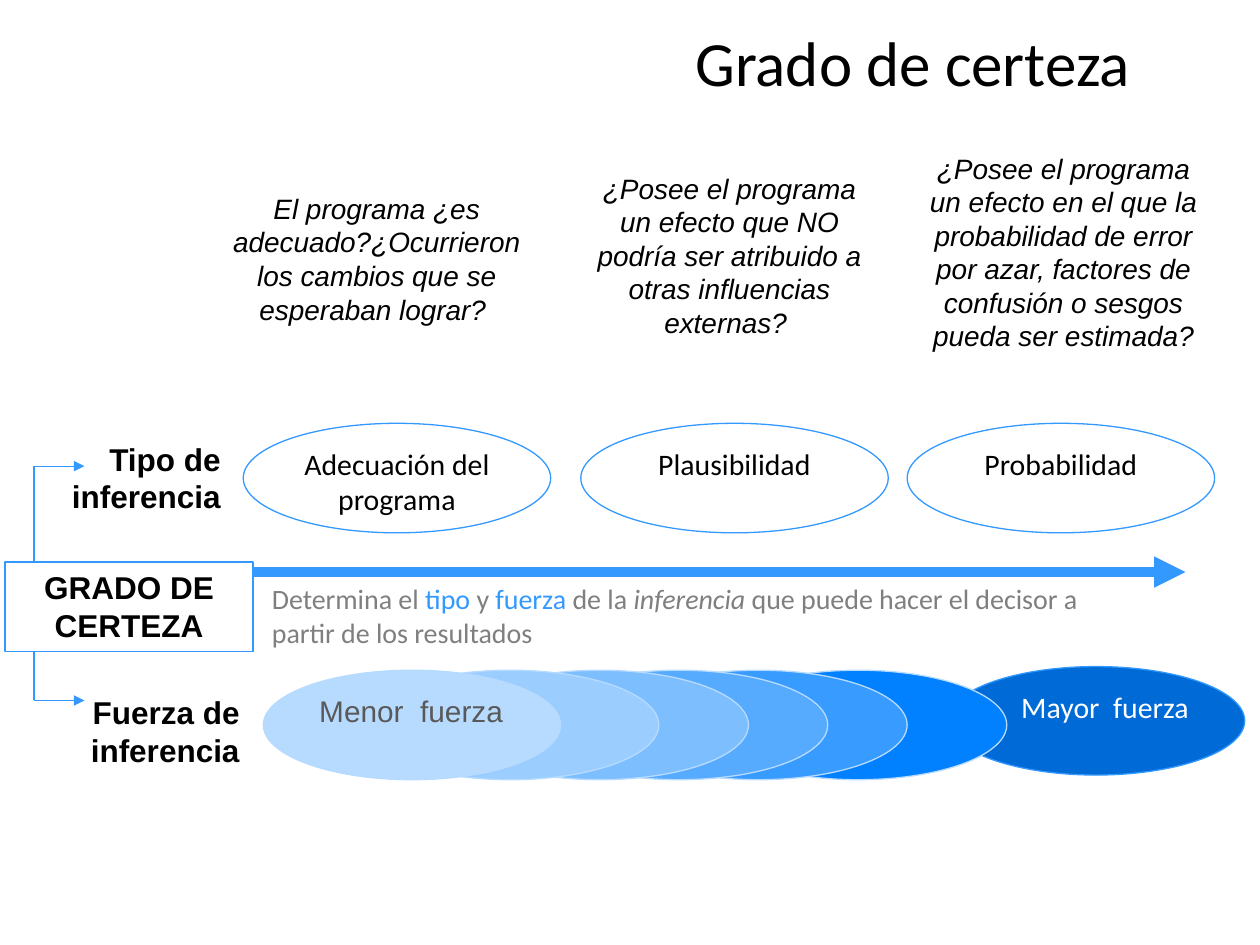
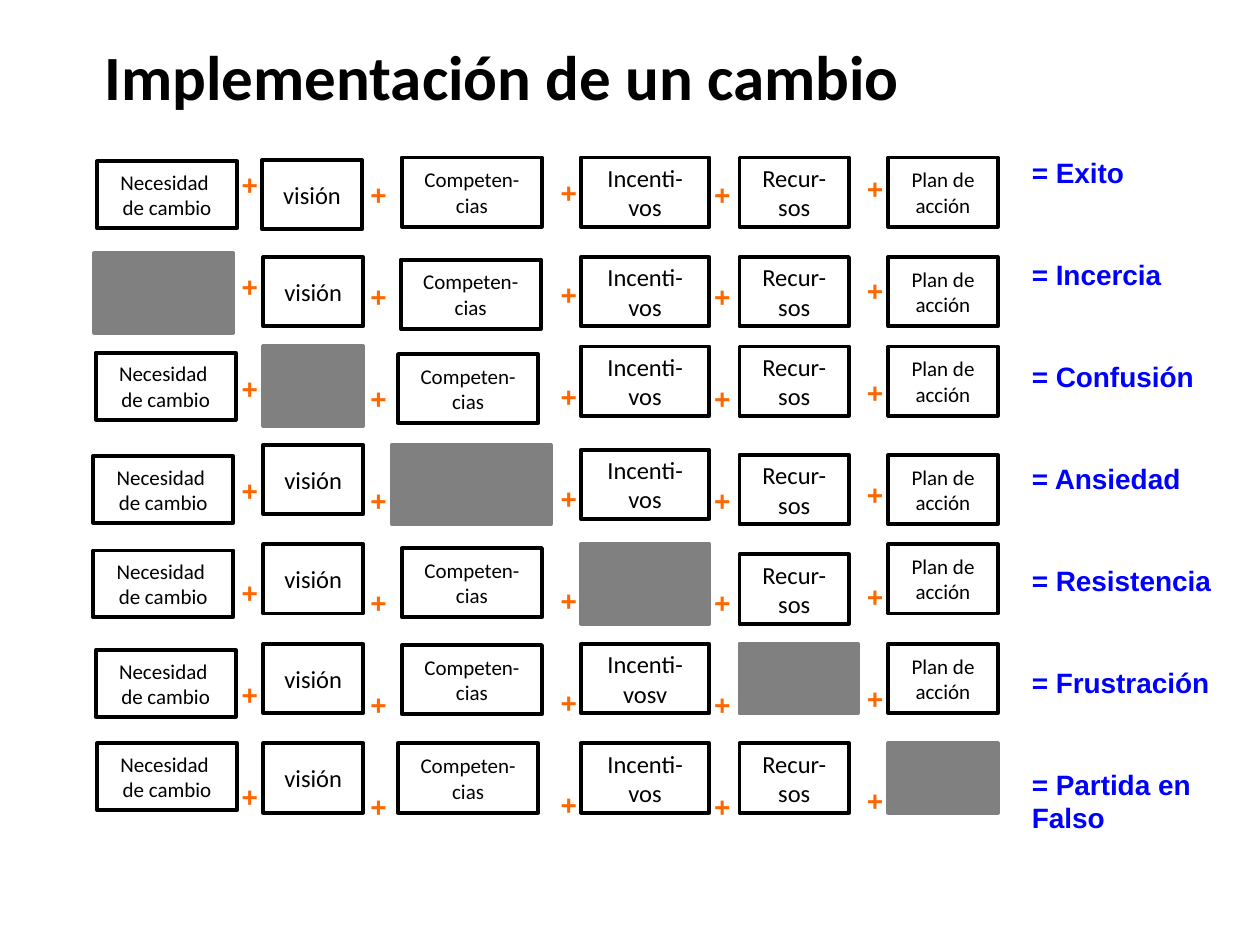
"""Build two slides: degree of certainty and implementation of a change."""
from lxml.etree import SubElement
from pptx import Presentation
from pptx.dml.color import RGBColor
from pptx.enum.shapes import MSO_CONNECTOR, MSO_SHAPE
from pptx.enum.text import MSO_ANCHOR, MSO_AUTO_SIZE, PP_ALIGN
from pptx.oxml.ns import qn
from pptx.util import Pt

COLORS = {
    "black": "000000", "white": "FFFFFF", "accent": "3399FF", "gray": "7F7F7F",
    "missing": "808080", "plus": "FF6600", "outcome": "0000FF",
    "pale": "B7DBFF", "dark_gray": "595959",
}
LEFT, CENTER, RIGHT = PP_ALIGN.LEFT, PP_ALIGN.CENTER, PP_ALIGN.RIGHT

CERTAINTY_TITLE = "Grado de certeza"
QUESTIONS = [
    ("El programa ¿es adecuado?¿Ocurrieron los cambios que se esperaban lograr? ",
     (115.9, 105.8, 198.7, 85)),
    ("¿Posee el programa un efecto que NO podría ser atribuido a otras influencias externas? ",
     (331.9, 94.3, 169.9, 104.4)),
    ("¿Posee el programa un efecto en el que la probabilidad de error por azar, "
     "factores de confusión o sesgos pueda ser estimada?",
     (518.4, 82.8, 178.6, 123.8)),
]
INFERENCE_TYPES = [("Adecuación del programa", 139), ("Plausibilidad", 331.9),
                   ("Probabilidad", 518.4)]
AXIS_LABELS = [("Tipo de inferencia", (25.2, 247.7, 108, 51)),
               ("Fuerza de inferencia", (36.7, 392.4, 107.3, 51))]
CERTAINTY_LABEL = "GRADO DE CERTEZA"
CERTAINTY_BOX = (2.9, 321.1, 141.8, 51.1)
EXPLANATION = [
    ("Determina el ", "gray", False), ("tipo ", "accent", False),
    ("y ", "gray", False), ("fuerza ", "accent", False),
    ("de la ", "gray", False), ("inferencia", "gray", True),
    (" que puede hacer el decisor a partir de los resultados", "gray", False),
]
STRENGTHS = [(405.4, "0180FF"), (348.5, "379BFF"), (303.1, "57ABFF"),
             (257.8, "7DBEFF"), (206.6, "9BCDFF"), (150.5, "B7DBFF")]
STRONGEST, WEAKEST = "Mayor  fuerza", "Menor  fuerza"

CHANGE_TITLE = "Implementación de un cambio"
OUTCOMES = ["= Exito", "= Incercia", "= Confusión", "= Ansiedad",
            "= Resistencia", "= Frustración", "= Partida en Falso"]
FACTORS = [
    {"text": ["Necesidad ", "de cambio"], "font": 12, "size": (80, 38.2),
     "missing": (79.2, 45.4), "lefts": [55.5, 54, 54.7, 53.3, 53.3, 54.7, 55.5],
     "tops": [92.2, 144.7, 201.6, 260.6, 314.6, 371.5, 424.8]},
    {"text": ["visión"], "font": 14, "size": (57, 39.6),
     "missing": (57, 45.4), "lefts": [149.8] + [150.5] * 6,
     "tops": [91.4, 146.9, 198, 254.2, 311, 367.9, 424.8]},
    {"text": ["Competen-cias"], "font": 12, "size": (80, 39.6),
     "missing": (90.7, 45.4), "lefts": [229.7, 229, 227.5, 224, 229.7, 229.7, 227.5],
     "tops": [90, 148.3, 202.3, 254.2, 313.2, 368.6, 424.8]},
    {"text": ["Incenti-vos"], "font": 14, "size": (73.4, 39.6),
     "missing": (73.4, 45.4), "lefts": [331.9] * 7,
     "tops": [90, 146.9, 198, 257, 311, 367.9, 424.8]},
    {"text": ["Recur-sos"], "font": 14, "size": (62.6, 39.6),
     "missing": (67.7, 39.6), "lefts": [422.6] * 7,
     "tops": [90, 146.9, 198, 259.9, 316.8, 367.9, 424.8]},
    {"text": ["Plan de acción"], "font": 12, "size": (62.6, 39.6),
     "missing": (62.6, 39.6), "lefts": [507.6] * 7,
     "tops": [90, 146.9, 198, 259.9, 311, 367.9, 424.8]},
]
VARIANTS = {(5, 3): ["Incenti-vosv"]}
PLUS_COLUMNS = [(131, 96), (204.5, 101.7), (313.2, 100.3), (401, 101.7), (488.2, 98.1)]
OUTCOME_COLUMN = (582.5, 88.8)
ROW_GAP = 39.1


def rgb(color):
    return RGBColor.from_string(COLORS.get(color, color))


def points(box):
    return [Pt(value) for value in box]


def add_run(paragraph, text, size, font="Calibri", color="black", bold=False, italic=False):
    run = paragraph.add_run()
    run.text = text
    run.font.size, run.font.name = Pt(size), font
    run.font.bold, run.font.italic = bold, italic
    run.font.color.rgb = rgb(color)


def write(frame, texts, size, align=LEFT, gap=0, **style):
    frame.word_wrap = True
    for number, text in enumerate(texts):
        paragraph = frame.paragraphs[0] if number == 0 else frame.add_paragraph()
        paragraph.alignment = align
        paragraph.space_before, paragraph.space_after = Pt(0), Pt(gap)
        add_run(paragraph, text, size, **style)


def add_text(slide, texts, box, size, **style):
    frame = slide.shapes.add_textbox(*points(box)).text_frame
    write(frame, texts, size, **style)
    return frame


def add_block(slide, kind, box, fill, line, width=0.75, anchor=MSO_ANCHOR.TOP):
    block = slide.shapes.add_shape(kind, *points(box))
    block.shadow.inherit = False
    block.fill.solid()
    block.fill.fore_color.rgb = rgb(fill)
    block.line.color.rgb = rgb(line)
    block.line.width = Pt(width)
    block.text_frame.vertical_anchor = anchor
    return block.text_frame


def add_line(slide, start, end, width=0.75, arrow=False):
    line = slide.shapes.add_connector(MSO_CONNECTOR.STRAIGHT, *points(start + end))
    line.line.color.rgb = rgb("accent")
    line.line.width = Pt(width)
    if arrow:
        SubElement(line.line._get_or_add_ln(), qn("a:tailEnd"), type="triangle")
    SubElement(line._element.spPr, qn("a:effectLst"))


def add_titled_slide(deck, title, box, bold=False):
    slide = deck.slides.add_slide(deck.slide_layouts[5])
    heading = slide.shapes.title
    heading.left, heading.top, heading.width, heading.height = points(box)
    heading.text_frame.auto_size = MSO_AUTO_SIZE.NONE
    heading.text_frame.vertical_anchor = MSO_ANCHOR.TOP
    write(heading.text_frame, [title], 36, bold=bold)
    return slide


def build_certainty(deck):
    slide = add_titled_slide(deck, CERTAINTY_TITLE, (390.2, 10.1, 320, 106.6))
    ellipse = MSO_SHAPE.OVAL

    strongest = add_block(slide, ellipse, (541.4, 380.9, 169.9, 62), "006BD6", "accent")
    write(strongest, [STRONGEST], 17, align=RIGHT, color="white")
    for left, shade in STRENGTHS:
        weakest = add_block(slide, ellipse, (left, 383, 169.9, 62.6), shade, "pale")
    write(weakest, [WEAKEST], 17, font="Arial", color="dark_gray")

    add_line(slide, (48.2, 326.9), (677.5, 326.9), 6, arrow=True)
    certainty = add_block(slide, MSO_SHAPE.RECTANGLE, CERTAINTY_BOX, "white", "accent")
    write(certainty, [CERTAINTY_LABEL], 18, align=CENTER, font="Arial", bold=True)
    box_top = CERTAINTY_BOX[1]
    box_bottom = box_top + CERTAINTY_BOX[3]
    for edge, level in ((box_top, 266.4), (box_bottom, 400.3)):
        add_line(slide, (19.4, edge), (19.4, level))
        add_line(slide, (19.4, level), (48.2, level), arrow=True)

    explanation = add_text(slide, [], (148.3, 329, 499, 46), 16)
    for text, color, italic in EXPLANATION:
        add_run(explanation.paragraphs[0], text, 16, color=color, italic=italic)

    for name, left in INFERENCE_TYPES:
        inference = add_block(slide, ellipse, (left, 241.9, 175.7, 62.6), "white", "accent")
        write(inference, [name], 17, align=CENTER)
    for label, box in AXIS_LABELS:
        add_text(slide, [label], box, 18, align=RIGHT, font="Arial", bold=True)
    for question, box in QUESTIONS:
        add_text(slide, [question], box, 16, align=CENTER, font="Arial", italic=True)


def add_column(slide, texts, place, width, color):
    frame = add_text(slide, texts, (*place, width, 420), 16, gap=ROW_GAP,
                     font="Arial", color=color, bold=True)
    frame.margin_top = frame.margin_bottom = 0


def build_change(deck):
    slide = add_titled_slide(deck, CHANGE_TITLE, (52.6, 18, 473.8, 51.1), bold=True)
    for column, factor in enumerate(FACTORS):
        for row, place in enumerate(zip(factor["lefts"], factor["tops"])):
            absent = row == column + 1
            size = factor["missing" if absent else "size"]
            fill, line = ("missing", "missing") if absent else ("white", "black")
            block = add_block(slide, MSO_SHAPE.RECTANGLE, place + size, fill, line,
                              2.25, MSO_ANCHOR.MIDDLE)
            if not absent:
                texts = VARIANTS.get((row, column), factor["text"])
                write(block, texts, factor["font"], align=CENTER)
    for place in PLUS_COLUMNS:
        add_column(slide, ["+"] * len(OUTCOMES), place, 24, "plus")
    add_column(slide, OUTCOMES, OUTCOME_COLUMN, 118, "outcome")


def main():
    deck = Presentation()
    deck.slide_width, deck.slide_height = Pt(720), Pt(540)
    build_certainty(deck)
    build_change(deck)
    deck.save("out.pptx")


if __name__ == "__main__":
    main()
